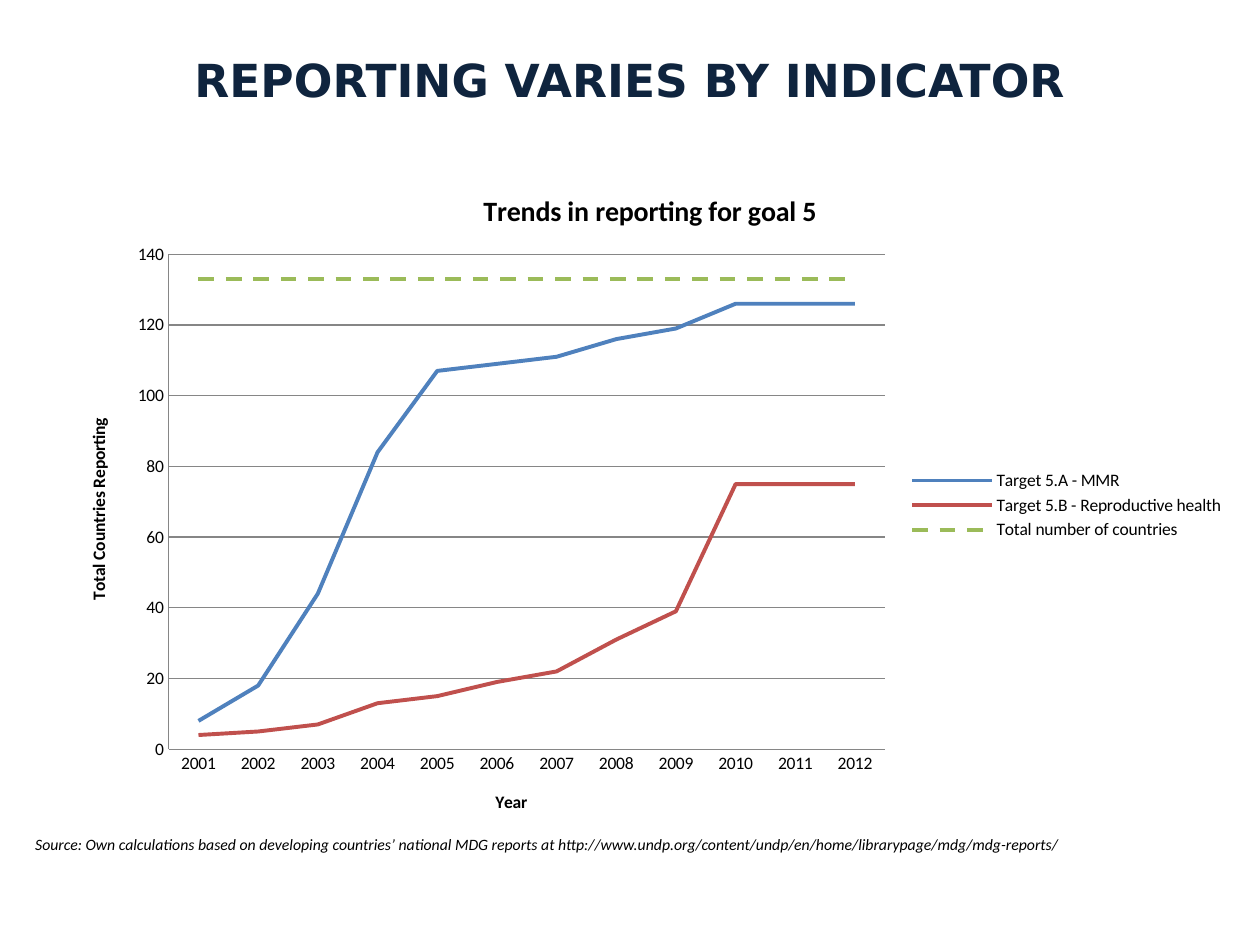
from dataclasses import dataclass

from lxml.etree import SubElement
from pptx import Presentation
from pptx.chart.chart import Chart
from pptx.chart.data import CategoryChartData
from pptx.dml.color import RGBColor
from pptx.enum.chart import XL_CHART_TYPE, XL_LEGEND_POSITION, XL_TICK_MARK
from pptx.enum.dml import MSO_LINE
from pptx.enum.text import MSO_ANCHOR, MSO_AUTO_SIZE, PP_ALIGN
from pptx.oxml.ns import qn
from pptx.slide import Slide
from pptx.util import Cm, Pt


@dataclass(frozen=True)
class Theme:
    navy: str = "0F243E"
    black: str = "000000"
    gray: str = "868686"
    head: str = "DejaVu Sans"
    body: str = "Calibri"
    title: float = 26
    chart: float = 16
    label: float = 10
    note: float = 9
    line: float = 2.25


@dataclass(frozen=True)
class Trend:
    name: str
    vals: list[int]
    color: str
    dashed: bool = False


THEME = Theme()
YEARS = [str(year) for year in range(2001, 2013)]
TRENDS = [
    Trend("Target 5.A - MMR",
          [8, 18, 44, 84, 107, 109, 111, 116, 119, 126, 126, 126], "4F81BD"),
    Trend("Target 5.B - Reproductive health",
          [4, 5, 7, 13, 15, 19, 22, 31, 39, 75, 75, 75], "C0504D"),
    Trend("Total number of countries", [133] * len(YEARS), "9BBB59", True),
]
# Inner plot area as fractions of the chart frame
PLOT = {"x": 0.09, "y": 0.13, "w": 0.61, "h": 0.73}
SOURCE = ("Source: Own calculations based on developing countries’ national MDG "
          "reports at http://www.undp.org/content/undp/en/home/librarypage/mdg/"
          "mdg-reports/")


def style(font, size: float, color: str = THEME.black, face: str = THEME.body,
          bold: bool = False, italic: bool = False) -> None:
    font.name, font.size = face, Pt(size)
    font.bold, font.italic = bold, italic
    font.color.rgb = RGBColor.from_string(color)


def caption(frame, text: str, size: float) -> None:
    frame.text = text
    style(frame.paragraphs[0].runs[0].font, size, bold=True)


def place(chart: Chart) -> None:
    """Fix the inner plot area, which python-pptx cannot set."""
    area = chart._chartSpace.chart.plotArea
    for old in area.findall(qn("c:layout")):
        area.remove(old)
    layout = SubElement(area, qn("c:layout"))
    area.insert(0, layout)
    manual = SubElement(layout, qn("c:manualLayout"))
    rules = {"layoutTarget": "inner", "xMode": "edge", "yMode": "edge", **PLOT}
    for tag, val in rules.items():
        SubElement(manual, qn(f"c:{tag}")).set("val", str(val))


def draw_axis(axis, text: str) -> None:
    caption(axis.axis_title.text_frame, text, THEME.label)
    axis.major_tick_mark = axis.minor_tick_mark = XL_TICK_MARK.NONE
    axis.format.line.color.rgb = RGBColor.from_string(THEME.gray)


def draw_chart(slide: Slide, trends: list[Trend]) -> None:
    data = CategoryChartData()
    data.categories = YEARS
    for trend in trends:
        data.add_series(trend.name, trend.vals)
    chart = slide.shapes.add_chart(
        XL_CHART_TYPE.LINE, Cm(1.27), Cm(3.35), Cm(23.67), Cm(13.67), data).chart
    style(chart.font, THEME.label)
    caption(chart.chart_title.text_frame, "Trends in reporting for goal 5",
            THEME.chart)
    chart.has_legend = True
    chart.legend.position = XL_LEGEND_POSITION.RIGHT
    chart.legend.include_in_layout = False

    # Axes and grid
    draw_axis(chart.category_axis, "Year")
    scale = chart.value_axis
    draw_axis(scale, "Total Countries Reporting")
    scale.minimum_scale, scale.maximum_scale, scale.major_unit = 0, 140, 20
    grid = scale.major_gridlines.format.line
    grid.color.rgb = RGBColor.from_string(THEME.gray)

    # Lines
    for trend, series in zip(trends, chart.plots[0].series):
        series.smooth = False
        line = series.format.line
        line.width = Pt(THEME.line)
        line.color.rgb = RGBColor.from_string(trend.color)
        if trend.dashed:
            line.dash_style = MSO_LINE.DASH
    place(chart)


def draw_title(slide: Slide, text: str) -> None:
    title = slide.shapes.title
    title.left, title.top = Cm(1.27), Cm(0.76)
    title.width, title.height = Cm(22.86), Cm(1.68)
    frame = title.text_frame
    frame.text = text
    frame.vertical_anchor = MSO_ANCHOR.MIDDLE
    frame.auto_size = MSO_AUTO_SIZE.NONE
    frame.paragraphs[0].alignment = PP_ALIGN.CENTER
    style(frame.paragraphs[0].runs[0].font, THEME.title, THEME.navy,
          THEME.head, bold=True)


def draw_note(slide: Slide, text: str) -> None:
    frame = slide.shapes.add_textbox(
        Cm(0.46), Cm(16.71), Cm(24.51), Cm(0.64)).text_frame
    frame.word_wrap = True
    frame.auto_size = MSO_AUTO_SIZE.SHAPE_TO_FIT_TEXT
    frame.text = text
    style(frame.paragraphs[0].runs[0].font, THEME.note, italic=True)


def main() -> None:
    deck = Presentation()
    deck.slide_width, deck.slide_height = Cm(25.4), Cm(19.05)
    slide = deck.slides.add_slide(deck.slide_layouts[5])
    draw_title(slide, "REPORTING VARIES BY INDICATOR")
    draw_chart(slide, TRENDS)
    draw_note(slide, SOURCE)
    deck.save("out.pptx")


if __name__ == "__main__":
    main()
